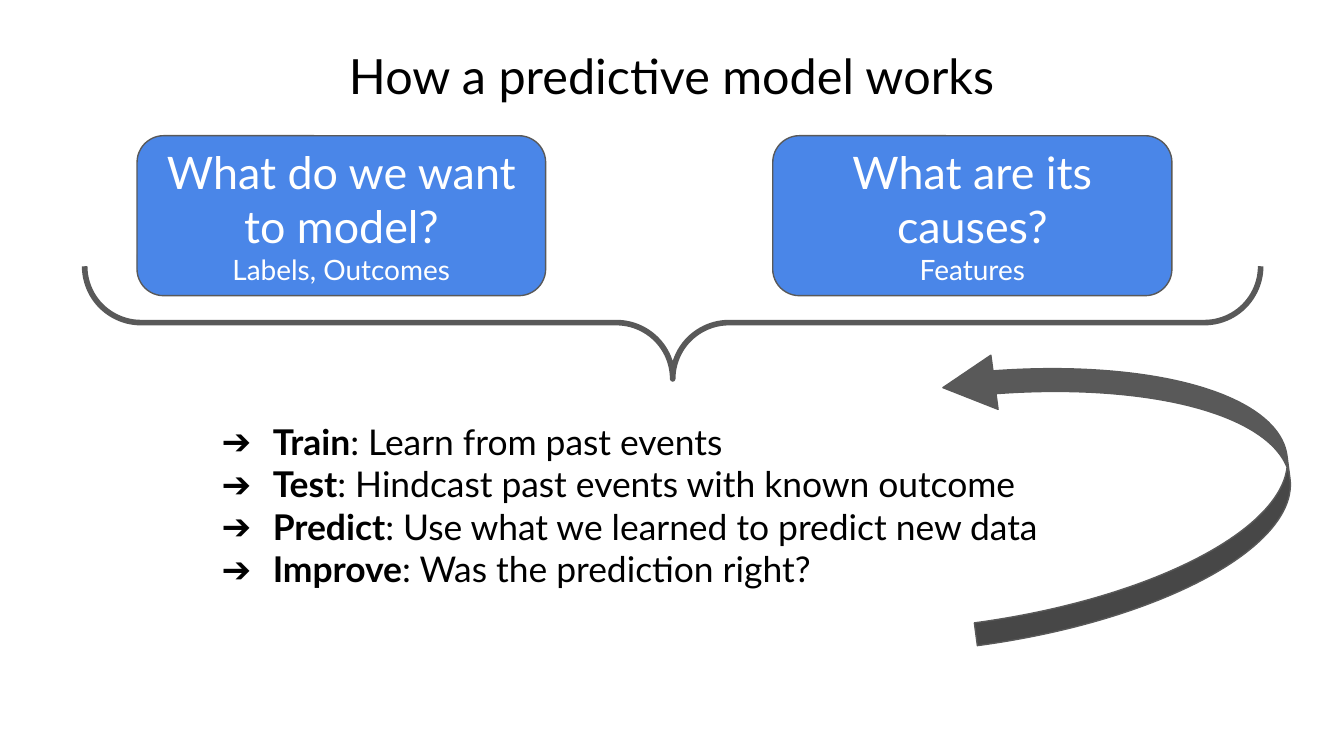
"""Build the slide on how a predictive model works."""
from lxml.etree import SubElement
from pptx import Presentation
from pptx.dml.color import RGBColor
from pptx.enum.shapes import MSO_SHAPE
from pptx.enum.text import MSO_ANCHOR, MSO_AUTO_SIZE, PP_ALIGN
from pptx.oxml.ns import qn
from pptx.util import Inches, Pt

BLACK = RGBColor(0x00, 0x00, 0x00)
WHITE = RGBColor(0xFF, 0xFF, 0xFF)
BLUE = RGBColor(0x4A, 0x86, 0xE8)
GRAY = RGBColor(0x59, 0x59, 0x59)
FONT = "Lato"
WIDTH = 10
HEIGHT = WIDTH * 9 / 16

TITLE = "How a predictive model works"
CARDS = [
    (1.02, 3.04, "What do we want to model?", "Labels, Outcomes"),
    (5.75, 2.97, "What are its causes?", "Features"),
]
STEPS = [
    ("Train", "Learn from past events"),
    ("Test", "Hindcast past events with known outcome"),
    ("Predict", "Use what we learned to predict new data"),
    ("Improve", "Was the prediction right?"),
]


def place(box):
    return [Inches(n) for n in box]


def set_frame(frame, inset):
    form = {"word_wrap": True, "auto_size": MSO_AUTO_SIZE.NONE,
            "vertical_anchor": MSO_ANCHOR.MIDDLE}
    for side in ("left", "top", "right", "bottom"):
        form["margin_" + side] = Inches(inset)
    for name, value in form.items():
        setattr(frame, name, value)


def add_run(para, text, size, color, bold=False):
    run = para.add_run()
    run.text = text
    for name, value in {"name": FONT, "size": Pt(size), "bold": bold}.items():
        setattr(run.font, name, value)
    run.font.color.rgb = color


def add_para(frame, index):
    return frame.add_paragraph() if index else frame.paragraphs[0]


def add_bullet(para):
    props = para._p.get_or_add_pPr()
    props.set("marL", str(Inches(0.5)))
    props.set("indent", str(Inches(-0.38)))
    color = SubElement(props, qn("a:buClr"))
    SubElement(color, qn("a:srgbClr"), val=str(BLACK))
    SubElement(props, qn("a:buFont"), typeface=FONT)
    SubElement(props, qn("a:buChar"), char="➔")


def add_form(slide, kind, box, fill, width, turn=0, adjust=()):
    form = slide.shapes.add_shape(kind, *place(box))
    form.shadow.inherit = False
    form.rotation = turn
    for i, value in enumerate(adjust):
        form.adjustments[i] = value
    if fill is None:
        form.fill.background()
    else:
        form.fill.solid()
        form.fill.fore_color.rgb = fill
    form.line.color.rgb = GRAY
    form.line.width = Pt(width)
    return form


def add_title(slide):
    title = slide.shapes.title
    sides = ("left", "top", "width", "height")
    for name, value in zip(sides, place((0, 0, WIDTH, 1.12))):
        setattr(title, name, value)
    set_frame(title.text_frame, 0.1)
    para = title.text_frame.paragraphs[0]
    para.alignment = PP_ALIGN.CENTER
    add_run(para, TITLE, 26, BLACK)


def add_steps(slide):
    frame = slide.shapes.add_textbox(*place((1.48, 2.46, 6.44, 2.59))).text_frame
    set_frame(frame, 0.05)
    for i, (name, note) in enumerate(STEPS):
        para = add_para(frame, i)
        add_bullet(para)
        add_run(para, name, 19, BLACK, True)
        add_run(para, ": " + note, 19, BLACK)


def add_card(slide, left, width, ask, note):
    card = add_form(slide, MSO_SHAPE.ROUNDED_RECTANGLE,
                    (left, 1.01, width, 1.19), BLUE, 0.75)
    frame = card.text_frame
    set_frame(frame, 0.1)
    for i, (text, size) in enumerate([(ask, 24), (note, 15)]):
        para = add_para(frame, i)
        para.alignment = PP_ALIGN.CENTER
        add_run(para, text, size, WHITE)


def main():
    deck = Presentation()
    deck.slide_width, deck.slide_height = place((WIDTH, HEIGHT))
    slide = deck.slides.add_slide(deck.slide_layouts[5])
    add_title(slide)
    add_form(slide, MSO_SHAPE.DOUBLE_BRACE, (2.49, -4.07, 5.03, 8.75),
             None, 3, 90)
    add_steps(slide)
    for card in CARDS:
        add_card(slide, *card)
    add_form(slide, MSO_SHAPE.CURVED_RIGHT_ARROW, (7.12, 2.51, 2.47, 2.14),
             GRAY, 0.75, 172.4, (0.08, 0.19, 0.18))
    deck.save("out.pptx")


if __name__ == "__main__":
    main()
